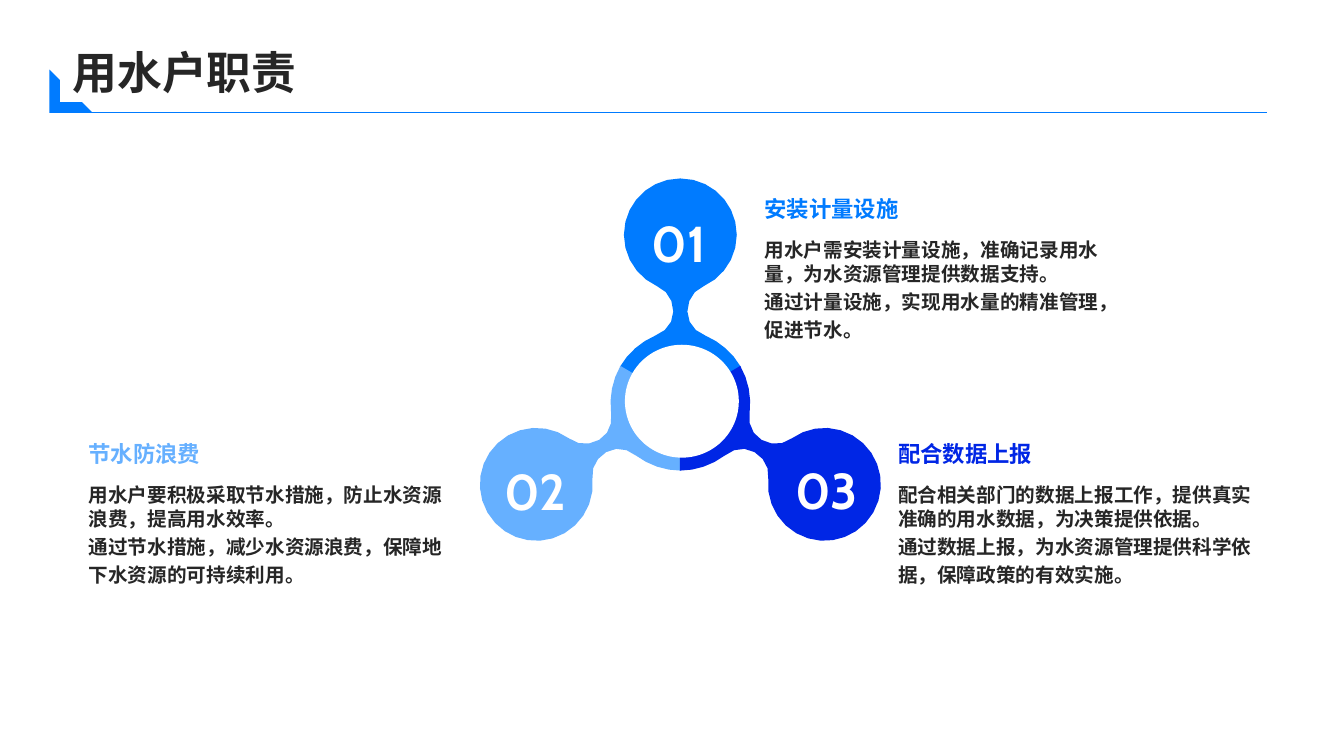
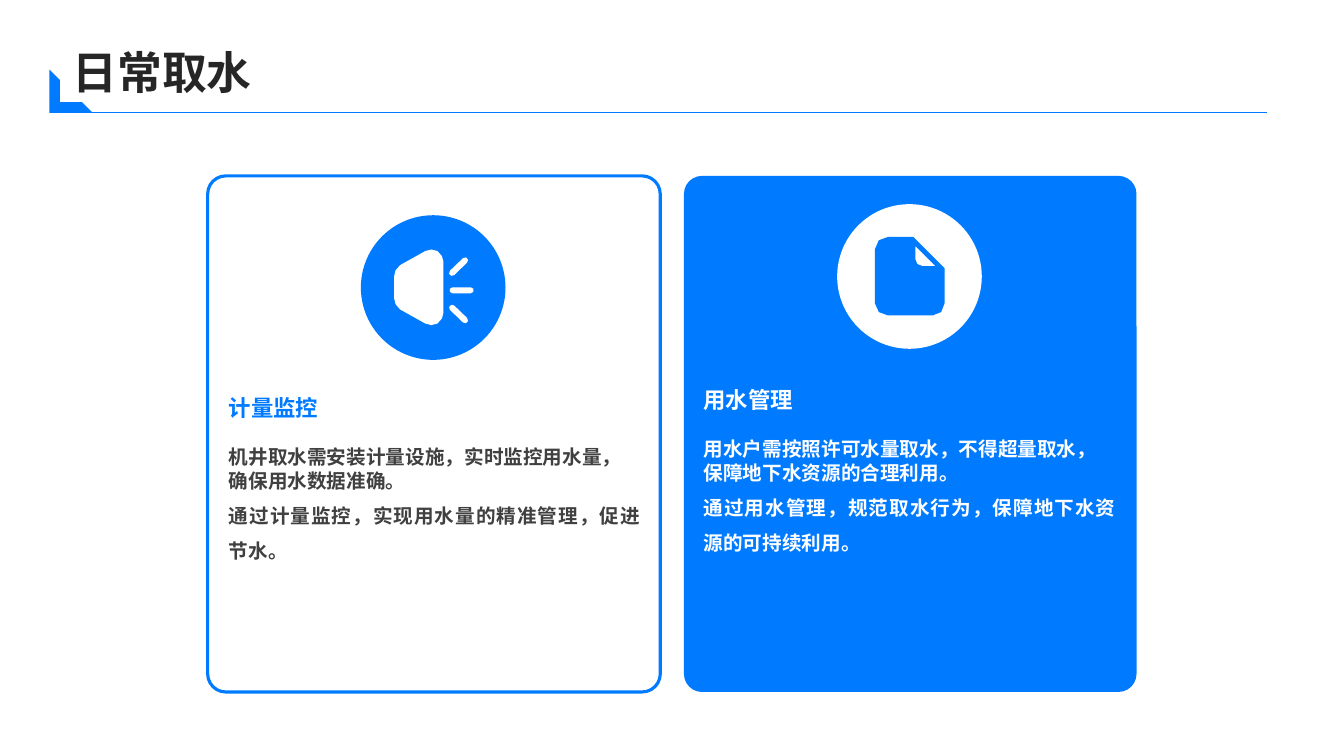
import math
import lxml.etree
import pptx
import pptx.dml.color
import pptx.enum.shapes
import pptx.enum.text
import pptx.oxml.ns
import pptx.util

BLUE = pptx.dml.color.RGBColor(0x00, 0x7B, 0xFF)
SKY = pptx.dml.color.RGBColor(0x66, 0xB0, 0xFF)
NAVY = pptx.dml.color.RGBColor(0x00, 0x26, 0xE5)
WHITE = pptx.dml.color.RGBColor(0xFF, 0xFF, 0xFF)
INK = pptx.dml.color.RGBColor(0x26, 0x26, 0x26)
GRAY = pptx.dml.color.RGBColor(0x40, 0x40, 0x40)
CHINESE = "Noto Sans CJK SC"
DIGITS = "Cabin"
LEFT = pptx.enum.text.PP_ALIGN.LEFT
CENTER = pptx.enum.text.PP_ALIGN.CENTER
JUSTIFY = pptx.enum.text.PP_ALIGN.JUSTIFY
TOP = pptx.enum.text.MSO_ANCHOR.TOP
MIDDLE = pptx.enum.text.MSO_ANCHOR.MIDDLE
SHAPE = pptx.enum.shapes.MSO_SHAPE

deck = pptx.Presentation()
deck.slide_width = pptx.util.Emu(12192000)
deck.slide_height = pptx.util.Inches(7.5)
COLUMN = deck.slide_width / 133.33
ROW = deck.slide_height / 75


def draw(page, figure, fill, at=None, edge=None):
    if at is None:
        contours = [[(round(x * COLUMN), round(y * ROW)) for x, y in contour]
                    for contour in figure]
        builder = page.shapes.build_freeform(*contours[0][0])
        for index, contour in enumerate(contours):
            if index:
                builder.move_to(*contour[0])
            builder.add_line_segments(contour[1:], close=True)
        shape = builder.convert_to_shape()
    else:
        left, top, width, height = at
        shape = page.shapes.add_shape(
            figure, round(left * COLUMN), round(top * ROW),
            round(width * COLUMN), round(height * ROW))
    shape.shadow.inherit = False
    shape.fill.solid()
    shape.fill.fore_color.rgb = fill
    if edge is None:
        shape.line.fill.background()
    else:
        shape.line.color.rgb = edge
        shape.line.width = pptx.util.Pt(2.25)
    return shape


def write(page, at, lines, size, color, font=CHINESE, anchor=TOP, inset=1):
    left, top, width, height = at
    box = page.shapes.add_textbox(
        round(left * COLUMN), round(top * ROW),
        round(width * COLUMN), round(height * ROW))
    frame = box.text_frame
    frame.word_wrap = True
    frame.vertical_anchor = anchor
    frame.margin_left = frame.margin_right = round(inset * COLUMN)
    frame.margin_top = frame.margin_bottom = round(inset * ROW / 2)
    for index, (text, align, spacing) in enumerate(lines):
        para = frame.paragraphs[0] if index == 0 else frame.add_paragraph()
        para.alignment = align
        para.line_spacing = spacing
        span = para.add_run()
        span.text = text
        span.font.size = pptx.util.Pt(size)
        span.font.bold = True
        span.font.name = font
        span.font.color.rgb = color
        east = lxml.etree.SubElement(span.font._element, pptx.oxml.ns.qn("a:ea"))
        east.set("typeface", font)


curves = {
    "arm": [
        [(6, -3.4)],
        [(5.2, -4.8), (3.9, -5.9), (2.5, -6.5)],
        [(1.4, -6.9), (0.7, -7.8), (0.7, -8.9)],
        [(0.7, -10), (1.3, -11), (2.3, -11.4)],
        [(4.3, -12.3), (5.6, -14.3), (5.6, -16.5)],
        [(5.6, -19.6), (3.1, -22.1), (0, -22.1)],
    ],
    "horn": [
        [(44, 26)],
        [(44, 31)],
        [(44, 31.4), (43.8, 31.8), (43.4, 32.1)],
        [(43, 32.3), (42.6, 32.3), (42.2, 32.1)],
        [(39.7, 30.7)],
        [(39.3, 30.4), (39.1, 30), (39.1, 29.6)],
        [(39.1, 27.4)],
        [(39.1, 27), (39.3, 26.6), (39.7, 26.3)],
        [(42.2, 24.9)],
        [(42.6, 24.7), (43, 24.7), (43.4, 24.9)],
        [(43.8, 25.2), (44, 25.6), (44, 26)],
    ],
    "sheet": [
        [(88.1, 23.5)],
        [(90.6, 23.5)],
        [(93.7, 26.6)],
        [(93.7, 30.1)],
        [(93.7, 30.8), (93.2, 31.3), (92.5, 31.3)],
        [(88.1, 31.3)],
        [(87.4, 31.3), (86.8, 30.8), (86.8, 30.1)],
        [(86.8, 24.7)],
        [(86.8, 24), (87.4, 23.5), (88.1, 23.5)],
    ],
    "fold": [
        [(90.8, 24.4)],
        [(90.8, 25.7)],
        [(90.8, 26.1), (91.1, 26.4), (91.5, 26.4)],
        [(92.8, 26.4)],
    ],
}
outlines = {}
for name, segments in curves.items():
    outline = []
    for segment in segments:
        if len(segment) == 1:
            outline.append(segment[0])
            continue
        knots = [outline[-1]] + segment
        steps = max(2, math.ceil(0.8 * math.dist(knots[0], knots[3])))
        for step in range(1, steps + 1):
            t = step / steps
            weights = [math.comb(3, k) * t ** k * (1 - t) ** (3 - k) for k in range(4)]
            outline.append(tuple(
                sum(w * knot[axis] for w, knot in zip(weights, knots)) for axis in (0, 1)))
    outlines[name] = outline

duties, daily = [deck.slides.add_slide(deck.slide_layouts[6]) for _ in range(2)]

HUB_X, HUB_Y = 67.5, 39.8
arm = [(0, 0)] + outlines["arm"] + [(-x, y) for x, y in reversed(outlines["arm"][:-1])]
for degrees, color in ((0, BLUE), (240, SKY), (120, NAVY)):
    cos, sin = math.cos(math.radians(degrees)), math.sin(math.radians(degrees))
    draw(duties, [[(HUB_X + x * cos - y * sin, HUB_Y + x * sin + y * cos) for x, y in arm]], color)
draw(duties, SHAPE.OVAL, WHITE, (62, 34.2, 11.3, 11.2))

duty_items = [
    ("02", SKY, (46.7, 44.6, 12.8), (7.8, 42.9, 37.3), "节水防浪费",
     "用水户要积极采取节水措施，防止水资源浪费，提高用水效率。",
     "通过节水措施，减少水资源浪费，保障地下水资源的可持续利用。"),
    ("03", NAVY, (75.6, 44.5, 12.8), (88.1, 42.9, 37.3), "配合数据上报",
     "配合相关部门的数据上报工作，提供真实准确的用水数据，为决策提供依据。",
     "通过数据上报，为水资源管理提供科学依据，保障政策的有效实施。"),
    ("01", BLUE, (61.3, 19.9, 12.1), (74.85, 18.6, 36.3), "安装计量设施",
     "用水户需安装计量设施，准确记录用水量，为水资源管理提供数据支持。",
     "通过计量设施，实现用水量的精准管理，促进节水。"),
]
for number, color, badge, (left, top, width), heading, first, second in duty_items:
    write(duties, (*badge, 7.1), [(number, CENTER, 1.1)], 36, WHITE, DIGITS)
    write(duties, (left, top + 4.5, width, 17.3),
          [(first, LEFT, pptx.util.Pt(17)), (second, LEFT, pptx.util.Pt(20))], 14, INK)
    write(duties, (left, top, width, 4.5), [(heading, LEFT, 1.1)], 16, color)

daily_items = [
    (WHITE, BLUE, BLUE, GRAY, 21.35, 21.8, 36.5, 42.6, "计量监控",
     "机井取水需安装计量设施，实时监控用水量，确保用水数据准确。",
     "通过计量监控，实现用水量的精准管理，促进节水。"),
    (BLUE, None, WHITE, WHITE, 20.25, 68.9, 35.7, 42.7, "用水管理",
     "用水户需按照许可水量取水，不得超量取水，保障地下水资源的合理利用。",
     "通过用水管理，规范取水行为，保障地下水资源的可持续利用。"),
]
for index, item in enumerate(daily_items):
    fill, edge, accent, ink, disc_top, text_left, text_top, width, heading, first, second = item
    left = 20.6 + 47.25 * index
    card = draw(daily, SHAPE.ROUNDED_RECTANGLE, fill, (left, 17.45, 44.9, 51.2), edge)
    card.adjustments[0] = 0.04
    draw(daily, SHAPE.OVAL, accent, (left + 15.2, disc_top, 14.35, 14.35))
    write(daily, (text_left, text_top + 7.2, width, 23.4),
          [(first, LEFT, pptx.util.Pt(17)), (second, JUSTIFY, pptx.util.Pt(25))],
          14, ink, inset=0.9)
    write(daily, (text_left, text_top, width, 6.6), [(heading, JUSTIFY, 1.5)], 16, accent,
          anchor=MIDDLE, inset=0.9)

speaker = [outlines["horn"]]
for ray_x, ray_y, tilt in ((45.5, 26.45, -44), (45.8, 28.8, 0), (45.5, 31.15, 44)):
    ray = []
    for end in (0, 180):
        reach = math.radians(tilt + end)
        for bend in (-90, -30, 30, 90):
            turn = math.radians(tilt + end + bend)
            ray.append((ray_x + 0.9 * math.cos(reach) + 0.3 * math.cos(turn),
                        ray_y + 0.9 * math.sin(reach) + 0.3 * math.sin(turn)))
    speaker.append(ray)
draw(daily, speaker, WHITE)
draw(daily, [outlines["fold"], outlines["sheet"]], BLUE)

for page, title, align in ((duties, "用水户职责", LEFT), (daily, "日常取水", JUSTIFY)):
    write(page, (7.2, 4.3, 118.8, 5.1), [(title, align, 1.1)], 32, INK,
          anchor=MIDDLE, inset=0)
    corner = draw(page, SHAPE.HALF_FRAME, BLUE, (4.9, 6.9, 4.3, 4.3))
    corner.adjustments[0] = 0.24
    corner.adjustments[1] = 0.25
    corner.rotation = 270
    rule = page.shapes.add_connector(
        pptx.enum.shapes.MSO_CONNECTOR.STRAIGHT,
        round(7.6 * COLUMN), round(11.15 * ROW), round(125.7 * COLUMN), round(11.15 * ROW))
    rule.line.color.rgb = BLUE
    rule.line.width = pptx.util.Pt(1)
    lxml.etree.SubElement(rule.element.spPr, pptx.oxml.ns.qn("a:effectLst"))

deck.save("out.pptx")
